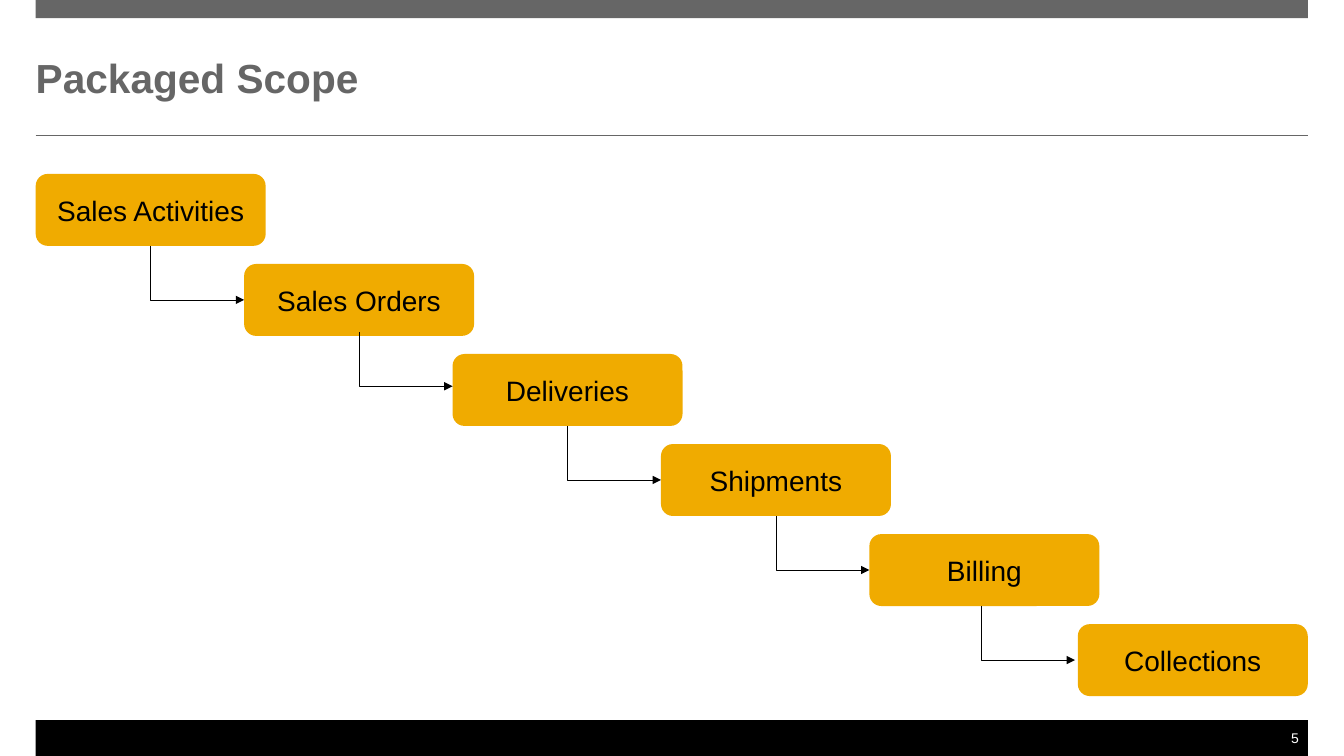
from lxml import etree
from pptx import Presentation
from pptx.dml.color import RGBColor
from pptx.enum.shapes import MSO_CONNECTOR, MSO_SHAPE
from pptx.enum.text import MSO_ANCHOR, PP_ALIGN
from pptx.oxml.ns import qn
from pptx.util import Pt

RECT, ROUNDED = MSO_SHAPE.RECTANGLE, MSO_SHAPE.ROUNDED_RECTANGLE
STRAIGHT, ELBOW = MSO_CONNECTOR.STRAIGHT, MSO_CONNECTOR.ELBOW
MIDDLE = MSO_ANCHOR.MIDDLE
LEFT, CENTER, RIGHT = PP_ALIGN.LEFT, PP_ALIGN.CENTER, PP_ALIGN.RIGHT

GREY = RGBColor(0x66, 0x66, 0x66)
AMBER = RGBColor(0xF0, 0xAB, 0x00)
BLACK = RGBColor(0, 0, 0)
WHITE = RGBColor(0xFF, 0xFF, 0xFF)

SLIDE_WIDTH, SLIDE_HEIGHT = 960, 540
MARGIN, CONTENT_WIDTH = 25.5, 908.7
STEPS = ["Sales Activities", "Sales Orders", "Deliveries",
         "Shipments", "Billing", "Collections"]
STEP_WIDTH, STEP_HEIGHT = 164.3, 51.4
# Small shifts (x, y) of the arrows that leave these steps
ARROW_SHIFTS = {"Sales Orders": (0, -2.6), "Billing": (-2, 0)}


def write_text(shape, text, size=20, color=BLACK, bold=False, align=LEFT,
               insets=(0, 0, 0, 0), wrap=True):
    frame = shape.text_frame
    frame.word_wrap = wrap
    frame.vertical_anchor = MIDDLE
    (frame.margin_left, frame.margin_top,
     frame.margin_right, frame.margin_bottom) = map(Pt, insets)
    paragraph = frame.paragraphs[0]
    paragraph.alignment = align
    run = paragraph.add_run()
    run.text = text
    run.font.name, run.font.size, run.font.bold = "Arial", Pt(size), bold
    run.font.color.rgb = color


def add_block(slide, box, fill, preset=RECT):
    block = slide.shapes.add_shape(preset, *map(Pt, box))
    block.shadow.inherit = False
    block.fill.solid()
    block.fill.fore_color.rgb = fill
    block.line.fill.background()
    return block


def add_line(slide, kind, start, end, color):
    line = slide.shapes.add_connector(kind, *map(Pt, (*start, *end)))
    line.line.color.rgb = color
    line.line.width = Pt(0.5)
    etree.SubElement(line._element.spPr, qn("a:effectLst"))
    return line


def add_step_arrow(slide, start, end):
    """Elbow that runs down from start, then right to end."""
    (x1, y1), (x2, y2) = start, end
    mid_x, mid_y = (x1 + x2) / 2, (y1 + y2) / 2
    half_run, half_drop = (x2 - x1) / 2, (y2 - y1) / 2
    # The unrotated elbow has its width and height swapped
    arrow = add_line(slide, ELBOW, (mid_x + half_drop, mid_y - half_run),
                     (mid_x - half_drop, mid_y + half_run), BLACK)
    properties = arrow._element.spPr
    properties.find(qn("a:xfrm")).set("rot", "16200000")
    properties.find(qn("a:prstGeom")).set("prst", "bentConnector2")
    outline = properties.find(qn("a:ln"))
    etree.SubElement(outline, qn("a:tailEnd"), type="triangle")


def add_header(slide, left, top, width):
    add_block(slide, (left, top, width, 12.9), GREY)
    rule_y = top + 96.9
    add_line(slide, STRAIGHT, (left, rule_y), (left + width, rule_y), GREY)
    title = slide.shapes.title
    title.left, title.top = Pt(left), Pt(top + 25.5)
    title.width, title.height = Pt(width), Pt(60)
    write_text(title, "Packaged Scope", size=29, color=GREY, bold=True)


def add_footer(slide, left, top, width, height):
    add_block(slide, (left, top, width, height), BLACK)
    number_width = 19.5
    page_number = slide.shapes.add_textbox(
        Pt(left + width - number_width), Pt(top + 6.8),
        Pt(number_width), Pt(12.2))
    write_text(page_number, "5", size=10, color=WHITE, align=RIGHT,
               insets=(0, 0, 6.5, 0))


def add_staircase(slide, left, top, width, height):
    pitch_x = (width - STEP_WIDTH) / (len(STEPS) - 1)
    pitch_y = (height - STEP_HEIGHT) / (len(STEPS) - 1)
    corners = [(left + i * pitch_x, top + i * pitch_y)
               for i in range(len(STEPS))]
    for label, (x, y) in zip(STEPS, corners):
        step = add_block(slide, (x, y, STEP_WIDTH, STEP_HEIGHT), AMBER, ROUNDED)
        write_text(step, label, align=CENTER, insets=(7.2, 5.7, 7.2, 5.7))
    # Arrows from the foot of each step to the side of the next
    for label, (x, y), (next_x, next_y) in zip(STEPS, corners, corners[1:]):
        dx, dy = ARROW_SHIFTS.get(label, (0, 0))
        add_step_arrow(slide,
                       (x + STEP_WIDTH / 2 + dx, y + STEP_HEIGHT + dy),
                       (next_x + dx, next_y + STEP_HEIGHT / 2 + dy))


def main():
    presentation = Presentation()
    presentation.slide_width = Pt(SLIDE_WIDTH)
    presentation.slide_height = Pt(SLIDE_HEIGHT)
    title_only = presentation.slide_layouts[5]
    slide = presentation.slides.add_slide(title_only)
    add_header(slide, MARGIN, 0, CONTENT_WIDTH)
    add_staircase(slide, MARGIN, 124.2, CONTENT_WIDTH, 373)
    add_footer(slide, MARGIN, 514.5, CONTENT_WIDTH, 25.5)
    presentation.save("out.pptx")


if __name__ == "__main__":
    main()
